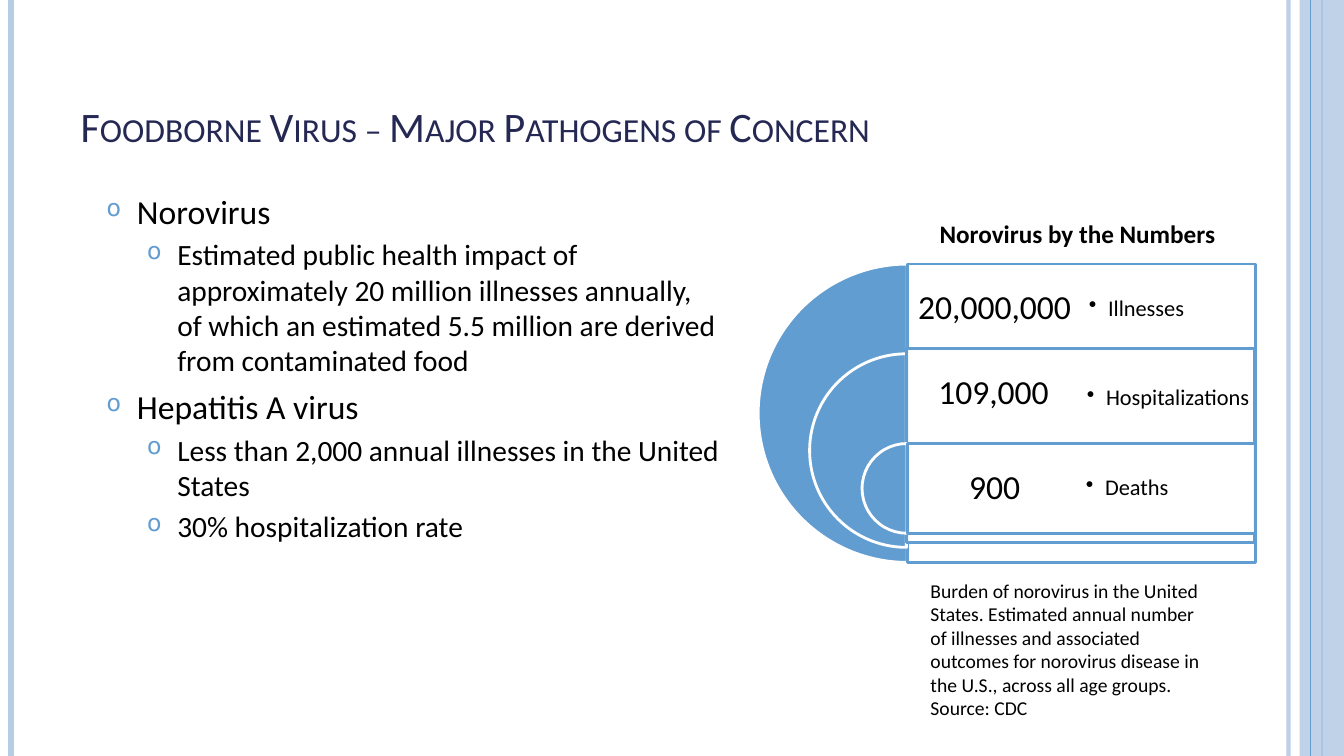
from pptx import Presentation
from pptx.dml.color import RGBColor
from pptx.enum.shapes import MSO_CONNECTOR, MSO_SHAPE
from pptx.enum.text import MSO_ANCHOR as ANCHOR, MSO_AUTO_SIZE, PP_ALIGN as ALIGN
from pptx.oxml.ns import qn
from pptx.util import Emu, Pt
from lxml.etree import SubElement

SCALE = 9144
SLIDE_W, SLIDE_H = 1333, 750
FONT = "Calibri"
BLUE = RGBColor(0x62, 0x9D, 0xD1)
PALE = RGBColor(0xB7, 0xCC, 0xE5)
NAVY = RGBColor(0x24, 0x28, 0x52)
BLACK = RGBColor(0, 0, 0)
WHITE = RGBColor(255, 255, 255)

EDGE_LINES = [(1278, PALE, 3, 93), (11, PALE, 4.5, 100), (1311, BLUE, 1.5, 100)]
BODY = [
    (0, "Norovirus"),
    (1, "Estimated public health impact of approximately 20 million illnesses annually, "
        "of which an estimated 5.5 million are derived from contaminated food"),
    (0, "Hepatitis A virus"),
    (1, "Less than 2,000 annual illnesses in the United States"),
    (1, "30% hospitalization rate"),
]
CAPTION = [
    "Burden of norovirus in the United States. Estimated annual number of illnesses and "
    "associated outcomes for norovirus disease in the U.S., across all age groups.",
    "Source: CDC",
]
BURDEN = [
    ("20,000,000", "Illnesses", (752, 262, 296), (900, 262, 345, 296), 1053),
    ("109,000", "Hospitalizations", (803, 351, 192), (899, 346, 345, 192), 1051),
    ("900", "Deaths", (855, 440, 89), (900, 440, 345, 89), 1050),
]
ROW_TOP, ROW_H = 262, 89


def px(*values):
    return [Emu(v * SCALE) for v in values]


def set_alpha(owner, percent):
    if percent < 100:
        color = owner.find(".//" + qn("a:srgbClr"))
        SubElement(color, qn("a:alpha")).set("val", str(percent * 1000))


def add_bullet(p, char, indent, hang, color=None, size=None):
    pPr = p._p.get_or_add_pPr()
    pPr.set("marL", str(indent * SCALE))
    pPr.set("indent", str(-hang * SCALE))
    if color is not None:
        SubElement(SubElement(pPr, qn("a:buClr")), qn("a:srgbClr")).set("val", str(color))
    if size:
        SubElement(pPr, qn("a:buSzPct")).set("val", str(size * 1000))
    SubElement(pPr, qn("a:buChar")).set("char", char)


def add_run(p, text, size, color=BLACK, bold=False):
    r = p.add_run()
    r.text = text
    f = r.font
    f.name, f.size, f.bold = FONT, Pt(size), bold
    f.color.rgb = color
    return r


def add_text(s, box, lines, size, bold=False, anchor=ANCHOR.TOP, align=ALIGN.LEFT,
             inset=None, bullet=None, spacing=None):
    tf = s.shapes.add_textbox(*px(*box)).text_frame
    tf.word_wrap = True
    tf.vertical_anchor = anchor
    if inset:
        tf.margin_left, tf.margin_top, tf.margin_right, tf.margin_bottom = px(*inset)
    for i, line in enumerate(lines):
        p = tf.add_paragraph() if i else tf.paragraphs[0]
        p.alignment = align
        if spacing:
            p.line_spacing = spacing
        if bullet:
            add_bullet(p, bullet, 19, 19)
        add_run(p, line, size, bold=bold)


def add_body(s, box, items):
    tf = s.shapes.add_textbox(*px(*box)).text_frame
    tf.word_wrap = True
    for i, (level, text) in enumerate(items):
        p = tf.add_paragraph() if i else tf.paragraphs[0]
        p.level = level
        if i:
            p.space_before = Pt(4 if level else 6)
        add_bullet(p, "o", 70 if level else 30, 30, BLUE, 80 if level else 70)
        add_run(p, text, 21 if level else 24)


def add_shape(s, kind, box, fill, line=None, width=2, alpha=100):
    sp = s.shapes.add_shape(kind, *px(*box))
    sp.shadow.inherit = False
    sp.fill.solid()
    sp.fill.fore_color.rgb = fill
    set_alpha(sp._element.spPr, alpha)
    if line is None:
        sp.line.fill.background()
    else:
        sp.line.color.rgb = line
        sp.line.width = Pt(width)
    return sp


def add_edge_line(s, x, color, width, alpha=100):
    c = s.shapes.add_connector(MSO_CONNECTOR.STRAIGHT, *px(x, 0, x, SLIDE_H))
    c.line.color.rgb = color
    c.line.width = Pt(width)
    set_alpha(c._element.spPr, alpha)
    SubElement(c._element.spPr, qn("a:effectLst"))


def add_frame(s):
    for edge in EDGE_LINES:
        add_edge_line(s, *edge)
    add_shape(s, MSO_SHAPE.RECTANGLE, (1289, 0, 44, SLIDE_H), PALE, alpha=87)
    add_edge_line(s, 1300, BLUE, 0.75)


def set_title(s, text):
    sp = s.shapes.title
    sp.left, sp.top, sp.width, sp.height = px(70, 30, 1089, 125)
    tf = sp.text_frame
    tf.auto_size = MSO_AUTO_SIZE.NONE
    tf.vertical_anchor = ANCHOR.BOTTOM
    p = tf.paragraphs[0]
    p.alignment = ALIGN.LEFT
    r = add_run(p, text, 30, NAVY)
    r._r.get_or_add_rPr().set("cap", "small")


def add_burden_diagram(s):
    for number, _, (x, y, size), panel, _ in BURDEN:
        pie = add_shape(s, MSO_SHAPE.PIE, (x, y, size, size), BLUE, WHITE)
        pie.adjustments[0], pie.adjustments[1] = 54, 162
        add_shape(s, MSO_SHAPE.RECTANGLE, panel, WHITE, BLUE, alpha=90)
        add_text(s, (panel[0], panel[1], 173, ROW_H), [number], 24, anchor=ANCHOR.MIDDLE,
                 align=ALIGN.CENTER, inset=(10, 10, 10, 10), spacing=0.9)
    for i, (_, label, _, _, x) in enumerate(BURDEN):
        add_text(s, (x, ROW_TOP + i * ROW_H, 216, ROW_H), [label], 16, anchor=ANCHOR.MIDDLE,
                 inset=(27, 27, 20, 27), bullet="•", spacing=0.9)


def main():
    prs = Presentation()
    prs.slide_width, prs.slide_height = px(SLIDE_W, SLIDE_H)
    s = prs.slides.add_slide(prs.slide_layouts[5])
    add_frame(s)
    set_title(s, "Foodborne Virus – Major Pathogens of Concern")
    add_body(s, (96, 184, 629, 533), BODY)
    add_text(s, (913, 569, 301, 151), CAPTION, 14)
    add_burden_diagram(s)
    add_text(s, (922, 212, 299, 40), ["Norovirus by the Numbers"], 18, bold=True)
    prs.save("out.pptx")


if __name__ == "__main__":
    main()
